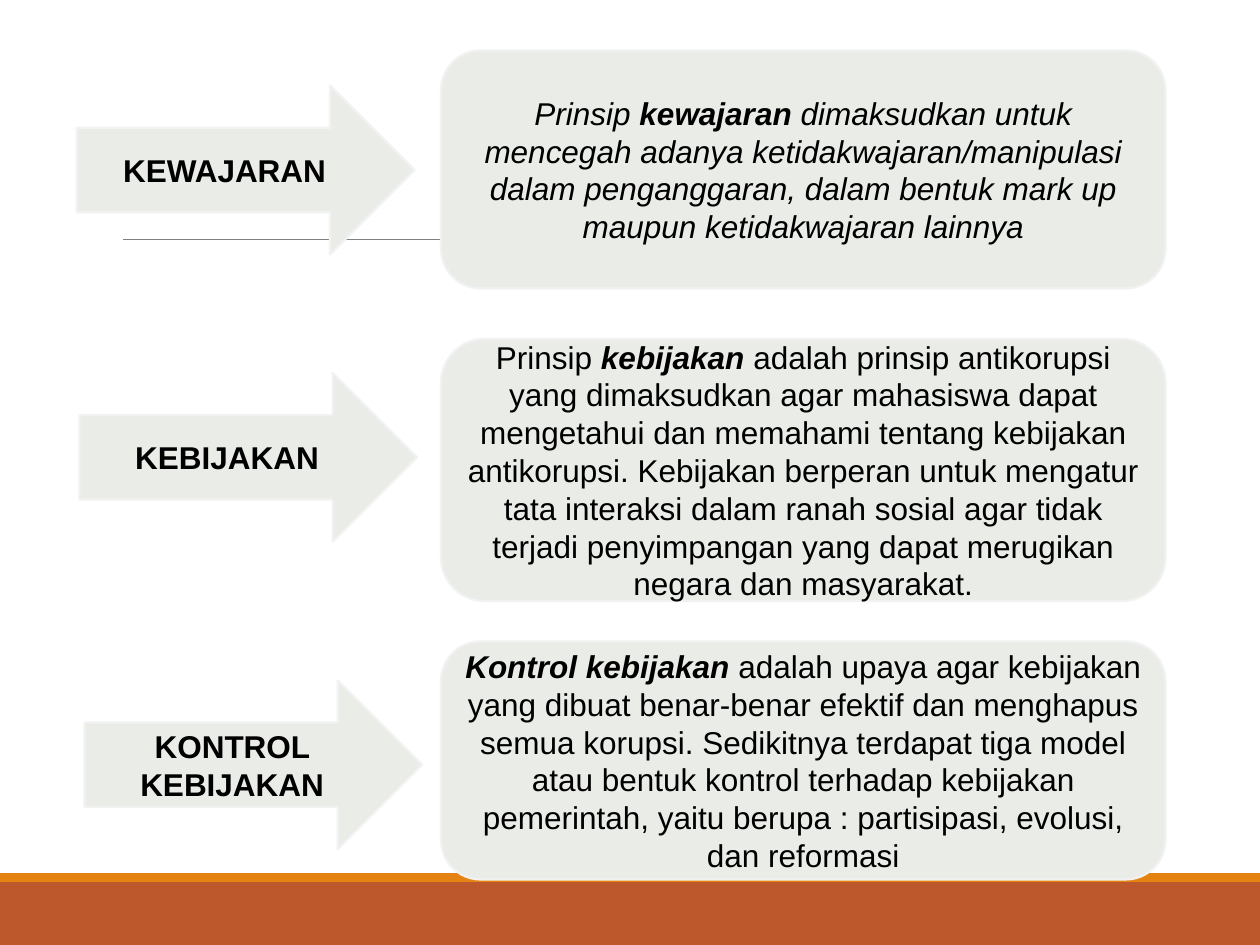
import pptx
import pptx.util
import pptx.dml.color
import pptx.enum.shapes
import pptx.enum.text
import pptx.oxml.ns
import lxml.etree

Inches = pptx.util.Inches
Pt = pptx.util.Pt
SHAPES = pptx.enum.shapes.MSO_SHAPE

PALE, EDGE, BLACK = "EAECE7", "F2F2F2", "000000"
RUST, ORANGE, GRAY = "BD582C", "E48312", "808080"
BOX_LEFT, BOX_WIDTH = 3.5, 5.75
ARROW_WIDTH, ARROW_HEIGHT = 2.68, 1.34

PRINCIPLES = [
    {
        "top": 0.4, "height": 1.89, "arrow_left": 0.61, "arrow_top": 0.68,
        "label": "KEWAJARAN",
        "runs": [
            ("Prinsip ", False, True),
            ("kewajaran ", True, True),
            ("dimaksudkan untuk mencegah adanya ketidakwajaran/manipulasi dalam "
             "penganggaran, dalam bentuk mark up maupun ketidakwajaran lainnya", False, True),
        ],
    },
    {
        "top": 2.69, "height": 2.08, "arrow_left": 0.63, "arrow_top": 2.96,
        "label": "KEBIJAKAN",
        "runs": [
            ("Prinsip ", False, False),
            ("kebijakan", True, True),
            (" adalah prinsip antikorupsi yang dimaksudkan agar mahasiswa dapat "
             "mengetahui dan memahami tentang kebijakan antikorupsi. Kebijakan berperan "
             "untuk mengatur tata interaksi dalam ranah sosial agar tidak terjadi "
             "penyimpangan yang dapat merugikan negara dan masyarakat.", False, False),
        ],
    },
    {
        "top": 5.09, "height": 1.89, "arrow_left": 0.67, "arrow_top": 5.4,
        "label": "KONTROL KEBIJAKAN",
        "runs": [
            ("Kontrol kebijakan ", True, True),
            ("adalah upaya agar kebijakan yang dibuat benar-benar efektif dan menghapus "
             "semua korupsi. Sedikitnya terdapat tiga model atau bentuk kontrol terhadap "
             "kebijakan pemerintah, yaitu berupa : partisipasi, evolusi, dan reformasi",
             False, False),
        ],
    },
]


def color(value):
    """Turn a hex string into a colour."""
    return pptx.dml.color.RGBColor.from_string(value)


def add_filled_shape(slide, kind, left, top, width, height, fill, line=None):
    """Add a flat preset shape, outlined only if a line colour is given."""
    shape = slide.shapes.add_shape(
        kind, Inches(left), Inches(top), Inches(width), Inches(height))
    shape.shadow.inherit = False
    shape.fill.solid()
    shape.fill.fore_color.rgb = color(fill)
    if line:
        shape.line.color.rgb = color(line)
        shape.line.width = Pt(1.25)
    else:
        shape.line.fill.background()
    return shape


def write_runs(shape, runs):
    """Write one centred paragraph of (text, bold, italic) runs."""
    shape.text_frame.word_wrap = True
    shape.text_frame.vertical_anchor = pptx.enum.text.MSO_ANCHOR.MIDDLE
    paragraph = shape.text_frame.paragraphs[0]
    paragraph.alignment = pptx.enum.text.PP_ALIGN.CENTER
    for text, bold, italic in runs:
        run = paragraph.add_run()
        run.text = text
        run.font.name = "Arial"
        run.font.size = Pt(18)
        run.font.bold = bold
        run.font.italic = italic
        run.font.color.rgb = color(BLACK)


def add_backdrop(slide, width, height):
    """Draw the footer bands and the thin rule."""
    footer_top = height - 0.5
    add_filled_shape(slide, SHAPES.RECTANGLE, 0, footer_top, width, 0.5, RUST)
    add_filled_shape(slide, SHAPES.RECTANGLE, 0, footer_top - 0.07, width, 0.07, ORANGE)
    rule = slide.shapes.add_connector(
        pptx.enum.shapes.MSO_CONNECTOR.STRAIGHT,
        Inches(0.98), Inches(1.9), Inches(9.15), Inches(1.9))
    rule.line.color.rgb = color(GRAY)
    rule.line.width = Pt(0.5)
    lxml.etree.SubElement(
        rule._element.spPr, pptx.oxml.ns.qn("a:effectLst"))


def add_principle(slide, principle):
    """Draw a labelled arrow and the explanation it points to."""
    box = add_filled_shape(
        slide, SHAPES.ROUNDED_RECTANGLE, BOX_LEFT, principle["top"],
        BOX_WIDTH, principle["height"], PALE, EDGE)
    write_runs(box, principle["runs"])
    arrow = add_filled_shape(
        slide, SHAPES.RIGHT_ARROW, principle["arrow_left"], principle["arrow_top"],
        ARROW_WIDTH, ARROW_HEIGHT, PALE, EDGE)
    write_runs(arrow, [(principle["label"], True, False)])


def main():
    """Build and save the slide."""
    presentation = pptx.Presentation()
    presentation.slide_width = Inches(10)
    presentation.slide_height = Inches(7.5)
    slide = presentation.slides.add_slide(presentation.slide_layouts[6])
    add_backdrop(slide, 10, 7.5)
    for principle in PRINCIPLES:
        add_principle(slide, principle)
    presentation.save("out.pptx")


if __name__ == "__main__":
    main()
